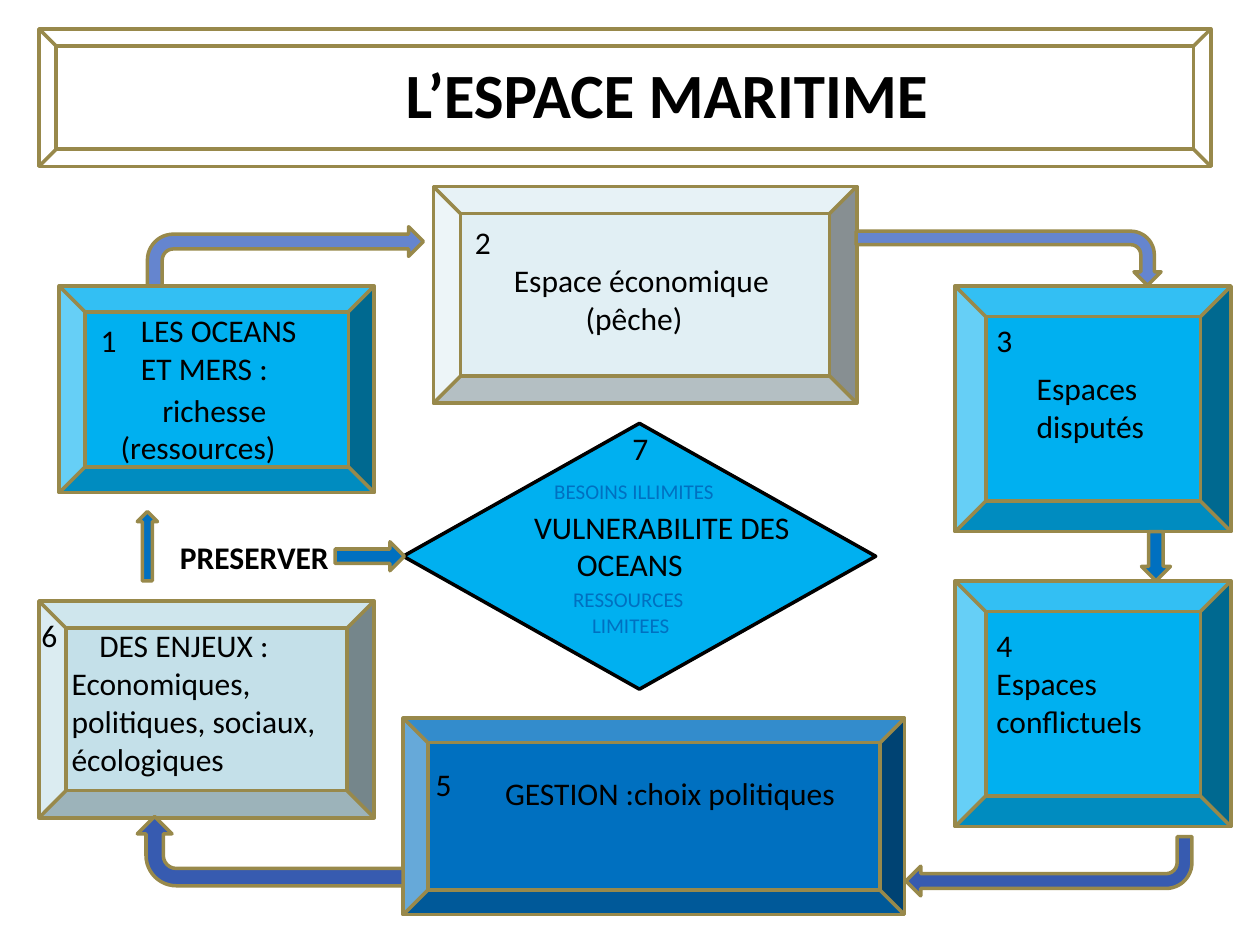
import pptx
import pptx.util
import pptx.dml.color
import pptx.enum.shapes
import pptx.enum.text
from dataclasses import dataclass

Inches = pptx.util.Inches
Shape = pptx.enum.shapes.MSO_SHAPE


@dataclass(frozen=True)
class Theme:
    font: str = "Calibri"
    title: int = 36
    body: int = 18
    note: int = 12
    outline: int = 2
    black: str = "000000"
    gold: str = "98894B"
    cyan: str = "00B0F0"
    blue: str = "0070C0"
    ice: str = "E1EFF4"
    mist: str = "C4E0E9"
    periwinkle: str = "6585CF"
    navy: str = "375BB0"


THEME = Theme()


def rgb(value):
    return pptx.dml.color.RGBColor.from_string(value)


def add_block(slide, kind, box, fill=None, line=THEME.gold, rotation=0):
    block = slide.shapes.add_shape(kind, *map(Inches, box))
    block.shadow.inherit = False
    block.rotation = rotation
    if fill:
        block.fill.solid()
        block.fill.fore_color.rgb = rgb(fill)
    else:
        block.fill.background()
    block.line.color.rgb = rgb(line)
    block.line.width = pptx.util.Pt(THEME.outline)


def add_label(slide, box, lines, size=THEME.body, color=THEME.black, bold=False):
    """Write (text, first-line indent in inches) pairs, one paragraph each."""
    frame = slide.shapes.add_textbox(*map(Inches, box)).text_frame
    frame.word_wrap = True
    frame.auto_size = pptx.enum.text.MSO_AUTO_SIZE.SHAPE_TO_FIT_TEXT
    font_format = {"name": THEME.font, "size": pptx.util.Pt(size), "bold": bold}
    for index, (text, indent) in enumerate(lines):
        paragraph = frame.add_paragraph() if index else frame.paragraphs[0]
        if indent:
            paragraph._p.get_or_add_pPr().set("indent", str(Inches(indent)))
        run = paragraph.add_run()
        run.text = text
        for name, value in font_format.items():
            setattr(run.font, name, value)
        run.font.color.rgb = rgb(color)


def within(box, offset):
    """Shift an offset box (left, top, width, height) into a parent box."""
    return box[0] + offset[0], box[1] + offset[1], offset[2], offset[3]


def add_title(slide, box):
    add_block(slide, Shape.BEVEL, box)
    add_label(slide, within(box, (2.81, 0.16, 6.88, 0.71)),
              [("L’ESPACE MARITIME", 0)], THEME.title, bold=True)


def add_stage(slide, box, fill, number, number_at, labels):
    add_block(slide, Shape.BEVEL, box, fill)
    for offset, lines in labels:
        add_label(slide, within(box, offset), lines)
    add_label(slide, within(box, (*number_at, 0.4, 0.4)), [(number, 0)])


def add_vulnerability(slide, box):
    add_block(slide, Shape.FLOWCHART_DECISION, box, THEME.cyan, THEME.black)
    add_label(slide, within(box, (0.94, 0.62, 2.58, 0.71)),
              [("VULNERABILITE DES", 0), ("OCEANS", 0.34)])
    add_label(slide, within(box, (1.1, 0.39, 1.95, 0.31)),
              [("BESOINS ILLIMITES", 0)], THEME.note, THEME.blue)
    add_label(slide, within(box, (1.25, 1.25, 1.41, 0.5)),
              [("RESSOURCES", 0), ("LIMITEES", 0.15)], THEME.note, THEME.blue)
    add_label(slide, within(box, (1.72, 0, 0.39, 0.4)), [("7", 0)])


STAGES = [
    ((0.47, 2.27, 2.5, 1.64), THEME.cyan, "1", (0.23, 0.23), [
        ((0.55, 0.15, 1.48, 0.71), [("LES OCEANS ET MERS :", 0)]),
        ((0.39, 0.78, 1.56, 0.71), [("richesse (ressources)", 0.33)])]),
    ((3.44, 1.48, 3.36, 1.72), THEME.ice, "2", (0.23, 0.24), [
        ((0.54, 0.54, 2.5, 0.71), [("Espace économique", 0), ("(pêche)", 0.57)])]),
    ((7.58, 2.27, 2.19, 1.95), THEME.cyan, "3", (0.23, 0.23), [
        ((0.55, 0.61, 1.87, 0.71), [("Espaces", 0), ("disputés", 0)])]),
    ((7.58, 4.61, 2.19, 1.95), THEME.cyan, "4", (0.23, 0.31), [
        ((0.23, 0.61, 1.8, 0.71), [("Espaces conflictuels", 0)])]),
    ((3.2, 5.7, 3.98, 1.56), THEME.blue, "5", (0.16, 0.32), [
        ((0.71, 0.39, 3.59, 0.4), [("GESTION :choix politiques", 0)])]),
    ((0.31, 4.77, 2.66, 1.72), THEME.mist, "6", (-0.08, 0.07), [
        ((0.16, 0.15, 2.73, 1.31), [
            ("DES ENJEUX :", 0.22),
            ("Economiques, politiques, sociaux, écologiques", 0)])]),
]

CYCLE_ARROWS = [
    (Shape.BENT_ARROW, (1.17, 1.8, 2.19, 0.47), THEME.periwinkle, 0),
    (Shape.BENT_ARROW, (7.79, 0.84, 0.43, 2.42), THEME.periwinkle, 90),
    (Shape.DOWN_ARROW, (9.06, 4.22, 0.23, 0.39), THEME.blue, 0),
    (Shape.BENT_ARROW, (7.19, 6.64, 2.27, 0.47), THEME.navy, 180),
    (Shape.BENT_ARROW, (1.87, 5.7, 0.55, 2.11), THEME.navy, 270),
    (Shape.UP_ARROW, (1.09, 4.06, 0.16, 0.55), THEME.blue, 0),
]


def add_preserve(slide, box):
    add_label(slide, within(box, (0, 0, 1.8, 0.4)), [("PRESERVER", 0)], bold=True)
    add_block(slide, Shape.RIGHT_ARROW, within(box, (1.33, 0.08, 0.55, 0.23)), THEME.blue)


def main():
    deck = pptx.Presentation()
    deck.slide_width, deck.slide_height = Inches(10), Inches(7.5)
    slide = deck.slides.add_slide(deck.slide_layouts[6])
    add_title(slide, (0.31, 0.23, 9.3, 1.09))
    add_vulnerability(slide, (3.2, 3.36, 3.75, 2.11))
    for stage in STAGES:
        add_stage(slide, *stage)
    for kind, box, fill, rotation in CYCLE_ARROWS:
        add_block(slide, kind, box, fill, rotation=rotation)
    add_preserve(slide, (1.33, 4.22, 1.88, 0.4))
    deck.save("out.pptx")


if __name__ == "__main__":
    main()
